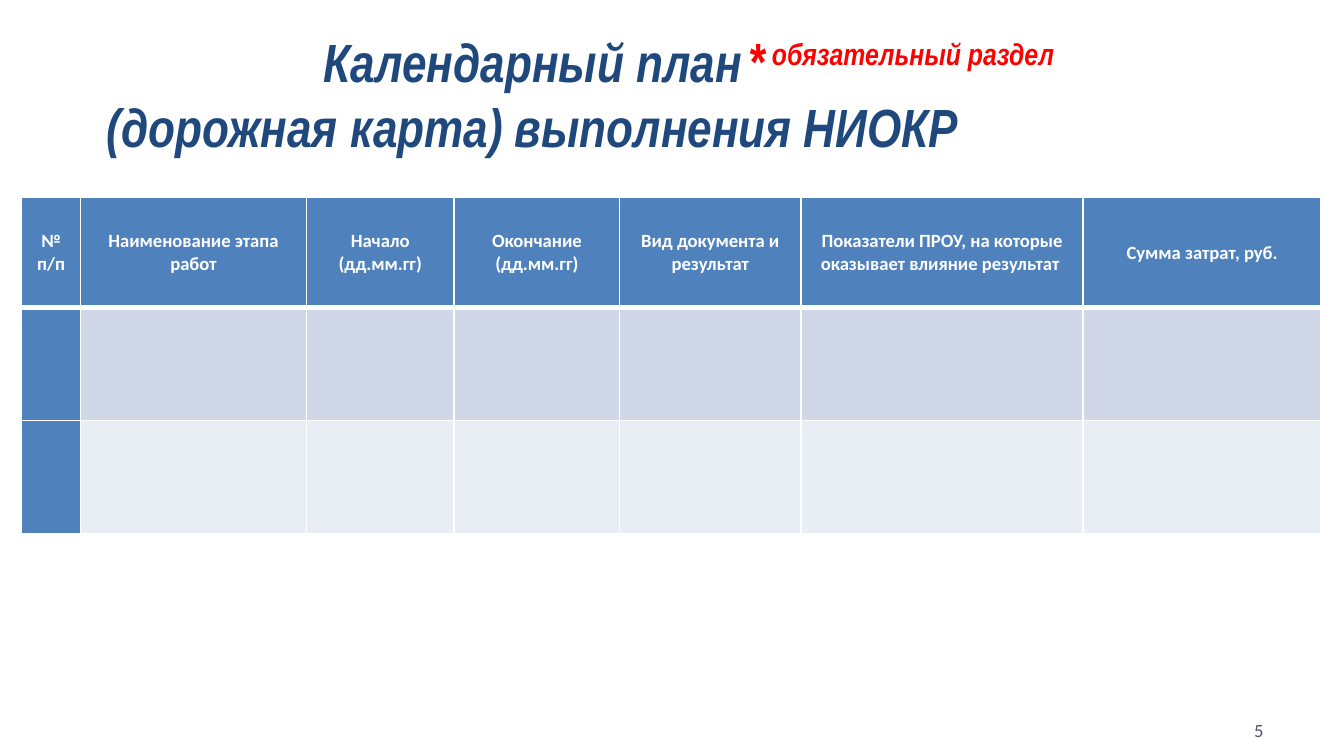
from lxml import etree
from pptx import Presentation
from pptx.dml.color import RGBColor
from pptx.enum.text import MSO_ANCHOR, MSO_AUTO_SIZE, PP_ALIGN
from pptx.oxml.ns import qn
from pptx.util import Inches, Pt

CENTER, LEFT, RIGHT = PP_ALIGN.CENTER, PP_ALIGN.LEFT, PP_ALIGN.RIGHT
TOP, MIDDLE = MSO_ANCHOR.TOP, MSO_ANCHOR.MIDDLE
NO_FIT = MSO_AUTO_SIZE.NONE

TITLE = ["Календарный план ", "(дорожная карта) выполнения НИОКР "]
NOTE_MARK, NOTE = "*", " обязательный раздел"
PAGE = "5"
COLUMNS = [
    (0.44, ["№ п/п"]),
    (1.68, ["Наименование этапа работ"]),
    (1.1, ["Начало", "(дд.мм.гг)"]),
    (1.23, ["Окончание", "(дд.мм.гг)"]),
    (1.35, ["Вид документа и результат"]),
    (2.1, ["Показатели ПРОУ, на которые оказывает влияние результат "]),
    (1.77, ["Сумма затрат, руб."]),
]
ROWS = [(0.82, "4F81BD"), (0.84, "D0D8E8"), (0.84, "E9EDF4")]
HEAD_FILL, WHITE = "4F81BD", "FFFFFF"
NAVY, RED, PURPLE = "1F497D", "FF0000", "604A7B"


def rgb(value):
    return RGBColor.from_string(value)


def add_text(p, text, size, color, font="Calibri", bold=False, italic=False,
             align=LEFT, baseline=None):
    p.alignment = align
    r = p.add_run()
    r.text = text
    r.font.size, r.font.name = Pt(size), font
    r.font.bold, r.font.italic = bold, italic
    r.font.color.rgb = rgb(color)
    if baseline:
        r.font._element.set("baseline", str(baseline * 1000))


def place(sp, left, top, width, height, anchor):
    sp.left, sp.top = Inches(left), Inches(top)
    sp.width, sp.height = Inches(width), Inches(height)
    tf = sp.text_frame
    tf.word_wrap, tf.auto_size, tf.vertical_anchor = True, NO_FIT, anchor
    return tf.paragraphs[0]


def set_borders(cell, bottom):
    tc_pr = cell._tc.get_or_add_tcPr()
    for side, width in (("L", 1), ("R", 1), ("T", 1), ("B", bottom)):
        ln = etree.SubElement(tc_pr, qn(f"a:ln{side}"), w=str(Pt(width)))
        fill = etree.SubElement(ln, qn("a:solidFill"))
        etree.SubElement(fill, qn("a:srgbClr"), val=WHITE)


prs = Presentation()
prs.slide_width = Inches(10)
prs.slide_height = prs.slide_width * 9 // 16
s = prs.slides.add_slide(prs.slide_layouts[5])

display = {"font": "Arial Narrow", "bold": True, "italic": True}
p = place(s.shapes.title, -0.27, 0.47, 8.56, 0.45, MIDDLE)
for i, line in enumerate(TITLE):
    if i:
        p.add_line_break()
    add_text(p, line, 28.8, NAVY, align=CENTER, **display)

table = s.shapes.add_table(len(ROWS), len(COLUMNS), Inches(0.16), Inches(1.47),
                           Inches(sum(w for w, _ in COLUMNS)),
                           Inches(sum(h for h, _ in ROWS))).table
for c, (width, _) in enumerate(COLUMNS):
    table.columns[c].width = Inches(width)
for r, (height, color) in enumerate(ROWS):
    table.rows[r].height = Inches(height)
    for c in range(len(COLUMNS)):
        cell = table.cell(r, c)
        set_borders(cell, 1 if r else 3)
        cell.fill.solid()
        cell.fill.fore_color.rgb = rgb(color if c else HEAD_FILL)

for c, (_, lines) in enumerate(COLUMNS):
    cell = table.cell(0, c)
    cell.vertical_anchor = MIDDLE
    cell.margin_left = cell.margin_right = Inches(0.07)
    cell.margin_top = cell.margin_bottom = 0
    tf = cell.text_frame
    for i, line in enumerate(lines):
        p = tf.add_paragraph() if i else tf.paragraphs[0]
        add_text(p, line, 10, WHITE, bold=True, align=CENTER)

p = place(s.shapes.add_textbox(0, 0, 0, 0), 5.47, 0.29, 2.84, 0.46, TOP)
p.line_spacing = 0.7
add_text(p, NOTE_MARK, 28, RED, **display)
add_text(p, NOTE, 28, RED, baseline=30, **display)

p = place(s.shapes.add_textbox(0, 0, 0, 0), 7.17, 5.28, 2.33, 0.3, MIDDLE)
add_text(p, PAGE, 10, PURPLE, align=RIGHT)

prs.save("out.pptx")
